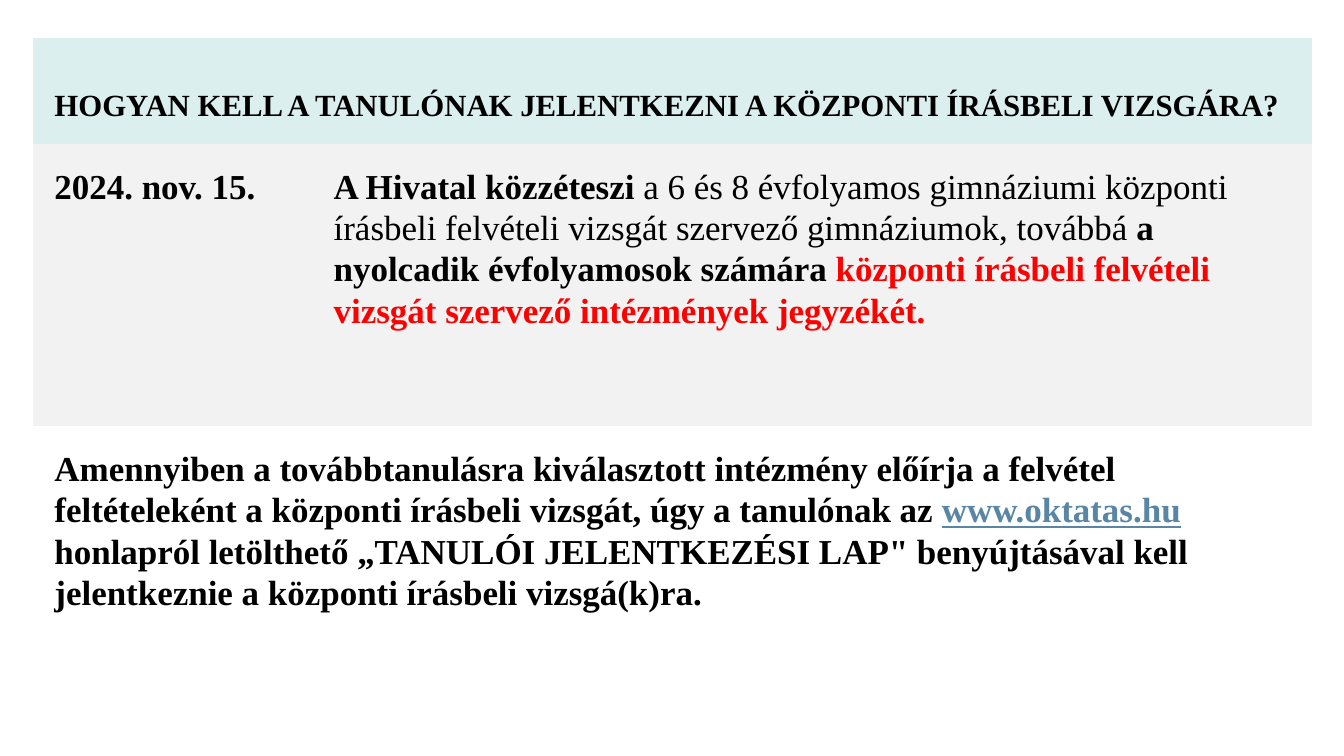
from lxml import etree
from pptx import Presentation
from pptx.dml.color import RGBColor
from pptx.enum.shapes import MSO_SHAPE
from pptx.enum.text import MSO_ANCHOR
from pptx.oxml.ns import qn
from pptx.util import Inches, Pt

RECTANGLE = MSO_SHAPE.RECTANGLE
TOP, BOTTOM = MSO_ANCHOR.TOP, MSO_ANCHOR.BOTTOM
BLANK_LAYOUT = 6
SLIDE_WIDTH, SLIDE_HEIGHT = 13.33, 7.5
COLUMN_WIDTHS = [2.77, 9.91]
ROW_HEIGHTS = [1.05, 2.8, 2.89]

WHITE, BLACK, RED = "FFFFFF", "000000", "FF0000"
MINT, PALE_GREY, LINK_BLUE = "DCEFEF", "F2F2F2", "5986A5"

HEADING = [("HOGYAN KELL A TANULÓNAK JELENTKEZNI A KÖZPONTI ÍRÁSBELI VIZSGÁRA?", {})]
DEADLINE = [("2024. nov. 15.", {})]
ANNOUNCEMENT = [
    ("A Hivatal közzéteszi ", {}),
    ("a 6 és 8 évfolyamos gimnáziumi központi írásbeli felvételi vizsgát "
     "szervező gimnáziumok, továbbá ", {"bold": False}),
    ("a nyolcadik évfolyamosok számára ", {}),
    ("központi írásbeli felvételi vizsgát szervező intézmények jegyzékét.", {"color": RED}),
]
APPLICATION = [
    ("Amennyiben a továbbtanulásra kiválasztott intézmény előírja a felvétel "
     "feltételeként a központi írásbeli vizsgát, úgy a tanulónak az ", {}),
    ("www.oktatas.hu", {"color": LINK_BLUE, "underline": True}),
    (" honlapról letölthető „TANULÓI JELENTKEZÉSI LAP\" benyújtásával kell "
     "jelentkeznie a központi írásbeli vizsgá(k)ra.", {}),
]


def rgb(value):
    return RGBColor.from_string(value)


class SlideBuilder:
    font_format = {"name": "Times New Roman", "bold": True}
    paragraph_format = {"line_spacing": 1.07, "space_after": Pt(8)}
    margins = {f"margin_{side}": Inches(0.21) for side in ("left", "right", "top", "bottom")}

    def __init__(self, slide):
        self.slide = slide

    def apply(self, target, values):
        for name, value in values.items():
            setattr(target, name, value)

    def backdrop(self, color):
        panel = self.slide.shapes.add_shape(
            RECTANGLE, 0, 0, Inches(SLIDE_WIDTH), Inches(SLIDE_HEIGHT))
        panel.shadow.inherit = False
        panel.fill.solid()
        panel.fill.fore_color.rgb = rgb(color)
        panel.line.fill.background()

    def table(self, left, top, widths, heights):
        table = self.slide.shapes.add_table(
            len(heights), len(widths), Inches(left), Inches(top),
            Inches(sum(widths)), Inches(sum(heights))).table
        self.apply(table, {"first_row": False, "horz_banding": False})
        for column, width in zip(table.columns, widths):
            column.width = Inches(width)
        for row, height in zip(table.rows, heights):
            row.height = Inches(height)
            for cell in row.cells:
                cell.fill.background()
                self.clear_borders(cell)
        return table

    def clear_borders(self, cell):
        properties = cell._tc.get_or_add_tcPr()
        for position, edge in enumerate(("a:lnL", "a:lnR", "a:lnT", "a:lnB")):
            border = etree.Element(qn(edge))
            etree.SubElement(border, qn("a:noFill"))
            properties.insert(position, border)

    def cell_text(self, cell, runs, size, fill=None, anchor=TOP):
        """Fill a cell with one paragraph of (text, format) runs."""
        self.apply(cell, {**self.margins, "vertical_anchor": anchor})
        if fill:
            cell.fill.solid()
            cell.fill.fore_color.rgb = rgb(fill)
        paragraph = cell.text_frame.paragraphs[0]
        self.apply(paragraph, self.paragraph_format)
        for text, changes in runs:
            run = paragraph.add_run()
            run.text = text
            values = {**self.font_format, "size": Pt(size), **changes}
            run.font.color.rgb = rgb(values.pop("color", BLACK))
            self.apply(run.font, values)


def main():
    presentation = Presentation()
    presentation.slide_width = Inches(SLIDE_WIDTH)
    presentation.slide_height = Inches(SLIDE_HEIGHT)
    layout = presentation.slide_layouts[BLANK_LAYOUT]
    builder = SlideBuilder(presentation.slides.add_slide(layout))

    builder.backdrop(WHITE)
    schedule = builder.table(0.33, 0.38, COLUMN_WIDTHS, ROW_HEIGHTS)
    for row in (0, 2):
        schedule.cell(row, 0).merge(schedule.cell(row, 1))
    builder.cell_text(schedule.cell(0, 0), HEADING, 22, MINT, BOTTOM)
    builder.cell_text(schedule.cell(1, 0), DEADLINE, 25, PALE_GREY)
    builder.cell_text(schedule.cell(1, 1), ANNOUNCEMENT, 25, PALE_GREY)
    builder.cell_text(schedule.cell(2, 0), APPLICATION, 25)

    presentation.save("out.pptx")


if __name__ == "__main__":
    main()
